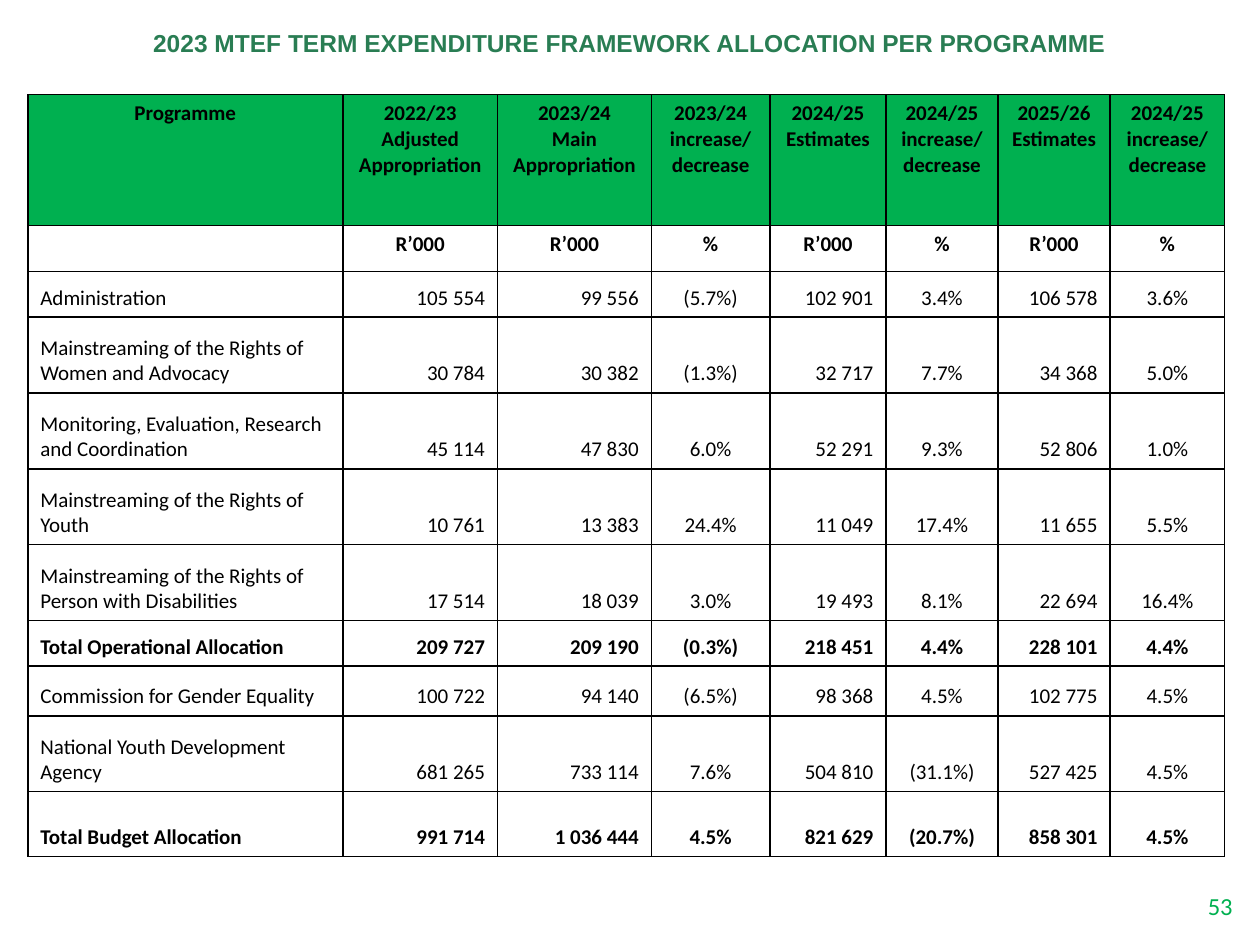
from lxml.etree import SubElement
from pptx import Presentation
from pptx.dml.color import RGBColor
from pptx.enum.text import MSO_ANCHOR as Anchor, PP_ALIGN as Align
from pptx.oxml.ns import qn
from pptx.util import Cm, Pt

COLORS = {"title": "297D53", "green": "00B050", "black": "000000"}
COL_WIDTHS = [6.35, 3.12, 3.1, 2.39, 2.34, 2.26, 2.26, 2.31]
ROW_HEIGHTS = [2.64, 0.92, 0.92, 1.53, 1.53, 1.53, 1.53, 0.92, 1.0, 1.53, 1.31]
PERCENT_COLS = (3, 5, 7)
HEADERS = [
    "Programme", "2022/23\nAdjusted Appropriation", "2023/24\nMain Appropriation",
    "2023/24 increase/ decrease", "2024/25 Estimates", "2024/25\nincrease/decrease",
    "2025/26 Estimates", "2024/25 increase/decrease",
]
UNITS = ["", "R’000", "R’000", "%", "R’000", "%", "R’000", "%"]
ALLOCATIONS = [
    ["Administration",
     "105 554", "99 556", "(5.7%)", "102 901", "3.4%", "106 578", "3.6%"],
    ["Mainstreaming of the Rights of Women and Advocacy",
     "30 784", "30 382", "(1.3%)", "32 717", "7.7%", "34 368", "5.0%"],
    ["Monitoring, Evaluation, Research and Coordination",
     "45 114", "47 830", "6.0%", "52 291", "9.3%", "52 806", "1.0%"],
    ["Mainstreaming of the Rights of Youth",
     "10 761", "13 383", "24.4%", "11 049", "17.4%", "11 655", "5.5%"],
    ["Mainstreaming of the Rights of Person with Disabilities",
     "17 514", "18 039", "3.0%", "19 493", "8.1%", "22 694", "16.4%"],
    ["Total Operational Allocation",
     "209 727", "209 190", "(0.3%)", "218 451", "4.4%", "228 101", "4.4%"],
    ["Commission for Gender Equality",
     "100 722", "94 140", "(6.5%)", "98 368", "4.5%", "102 775", "4.5%"],
    ["National Youth Development Agency",
     "681 265", "733 114", "7.6%", "504 810", "(31.1%)", "527 425", "4.5%"],
    ["Total Budget Allocation",
     "991 714", "1 036 444", "4.5%", "821 629", "(20.7%)", "858 301", "4.5%"],
]


def write(tf, text, size=12, font="Calibri", color="black", bold=False,
          align=Align.LEFT, spacing=None):
    tf.word_wrap = True
    for i, line in enumerate(text.split("\n")):
        p = tf.paragraphs[0] if i == 0 else tf.add_paragraph()
        p.alignment = align
        p.line_spacing = spacing
        if not line:
            SubElement(p._p, qn("a:endParaRPr"), sz=str(size * 100))
            continue
        r = p.add_run()
        r.text = line
        r.font.size = Pt(size)
        r.font.name = font
        r.font.bold = bold
        r.font.color.rgb = RGBColor.from_string(COLORS[color])


def add_borders(cell, color="black", width=1):
    tc_pr = cell._tc.get_or_add_tcPr()
    for side in ("lnL", "lnR", "lnT", "lnB"):
        ln = SubElement(tc_pr, qn(f"a:{side}"), w=str(Pt(width)))
        fill = SubElement(ln, qn("a:solidFill"))
        SubElement(fill, qn("a:srgbClr"), val=COLORS[color])


def add_title(s, text):
    sp = s.shapes.title
    sp.left, sp.top, sp.width, sp.height = Cm(0.56), Cm(0.51), Cm(24.26), Cm(2.13)
    sp.text_frame.vertical_anchor = Anchor.TOP
    write(sp.text_frame, text, size=14, font="Arial", color="title", bold=True,
          align=Align.CENTER, spacing=0.9)


def add_page_number(s, text):
    sp = s.shapes.add_textbox(Cm(23.47), Cm(17.83), Cm(1.63), Cm(0.86))
    write(sp.text_frame, text, size=14, color="green", align=Align.RIGHT)


def cell_align(row, col):
    if row < 2 or col in PERCENT_COLS:
        return Align.CENTER
    return Align.RIGHT if col else Align.LEFT


def add_allocation_table(s):
    rows = [HEADERS, UNITS, *ALLOCATIONS]
    table = s.shapes.add_table(len(rows), len(HEADERS), Cm(0.56), Cm(1.91),
                               Cm(sum(COL_WIDTHS)), Cm(sum(ROW_HEIGHTS))).table
    table.first_row = table.horz_banding = False
    for col, width in zip(table.columns, COL_WIDTHS):
        col.width = Cm(width)
    for i, values in enumerate(rows):
        table.rows[i].height = Cm(ROW_HEIGHTS[i])
        bold = i < 2 or values[0].startswith("Total")
        for j, text in enumerate(values):
            cell = table.cell(i, j)
            cell.vertical_anchor = Anchor.TOP if i < 2 else Anchor.BOTTOM
            write(cell.text_frame, text, bold=bold, align=cell_align(i, j))
            add_borders(cell)
            if i == 0:
                cell.fill.solid()
                cell.fill.fore_color.rgb = RGBColor.from_string(COLORS["green"])
            else:
                cell.fill.background()


def main():
    prs = Presentation()
    prs.slide_width, prs.slide_height = Cm(25.4), Cm(19.05)
    s = prs.slides.add_slide(prs.slide_layouts[5])
    add_page_number(s, "53")
    add_title(s, "2023 MTEF TERM EXPENDITURE FRAMEWORK ALLOCATION PER PROGRAMME")
    add_allocation_table(s)
    prs.save("out.pptx")


if __name__ == "__main__":
    main()
